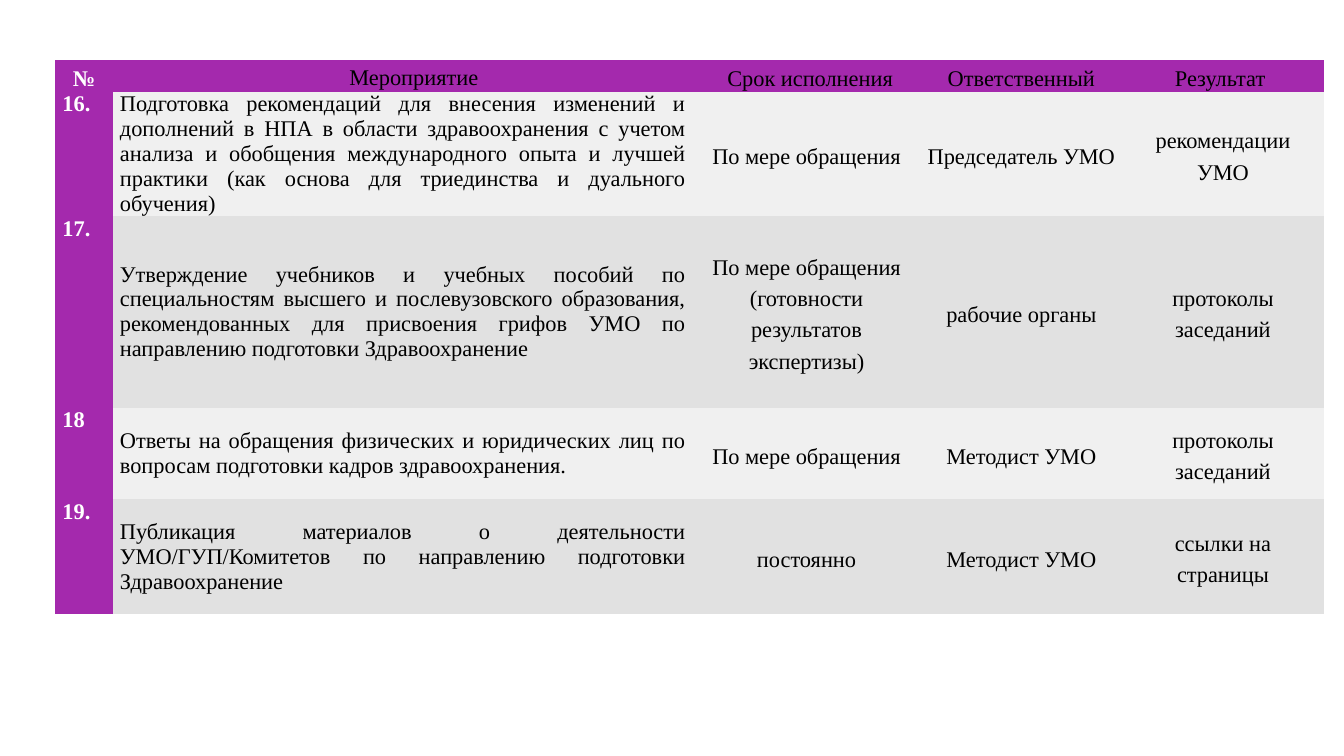
from pptx import Presentation
from pptx.dml.color import RGBColor
from pptx.enum.text import MSO_ANCHOR, PP_ALIGN
from pptx.util import Inches, Pt

PURPLE, WHITE, BLACK = "A429AD", "FFFFFF", "000000"
BANDS = ["F0F0F0", "E1E1E1"]
NO_GRID_STYLE = "{2D5ABB26-0587-4C30-8999-92F81FD0307C}"
COLUMN_WIDTHS = [0.57, 5.75, 2.26, 2, 2]
ROW_HEIGHTS = [0.24, 0.95, 1.9, 0.91, 1.14]
HEADER_INDENTS = {1: 0.22, 2: 0.07}
PLAN = [
    ["№", "Мероприятие", "Срок исполнения", "Ответственный", "Результат "],
    ["16.",
     "Подготовка рекомендаций для внесения изменений и дополнений в НПА "
     "в области здравоохранения с учетом анализа и обобщения международного "
     "опыта и лучшей практики (как основа для триединства и дуального обучения)",
     "По мере обращения", "Председатель УМО", "рекомендации УМО"],
    ["17.",
     "Утверждение учебников и учебных пособий по специальностям высшего "
     "и послевузовского образования, рекомендованных для присвоения грифов "
     "УМО по направлению подготовки Здравоохранение",
     "По мере обращения (готовности результатов экспертизы)",
     "рабочие органы", "протоколы заседаний"],
    ["18",
     "Ответы на обращения физических и юридических лиц по вопросам "
     "подготовки кадров здравоохранения.",
     "По мере обращения", "Методист УМО", "протоколы заседаний"],
    ["19.",
     "Публикация материалов о деятельности УМО/ГУП/Комитетов "
     "по направлению подготовки Здравоохранение",
     "постоянно", "Методист УМО", "ссылки на страницы"],
]


def color(value):
    return RGBColor.from_string(value)


presentation = Presentation()
presentation.slide_width = Inches(13.33)
presentation.slide_height = Inches(7.5)
slide = presentation.slides.add_slide(presentation.slide_layouts[6])

table_shape = slide.shapes.add_table(
    len(PLAN), len(COLUMN_WIDTHS), Inches(0.55), Inches(0.6),
    Inches(sum(COLUMN_WIDTHS)), Inches(sum(ROW_HEIGHTS)))
table = table_shape.table
table.horz_banding = False
table.first_col = True
table._tbl.tblPr[0].text = NO_GRID_STYLE
for column, width in zip(table.columns, COLUMN_WIDTHS):
    column.width = Inches(width)
for row, height in zip(table.rows, ROW_HEIGHTS):
    row.height = Inches(height)

for row_index, texts in enumerate(PLAN):
    for column_index, text in enumerate(texts):
        is_header = row_index == 0
        is_number = column_index == 0
        is_result_header = is_header and column_index == len(texts) - 1
        cell = table.cell(row_index, column_index)
        cell.margin_left = cell.margin_right = Inches(0.07)
        cell.margin_top = cell.margin_bottom = 0
        cell.fill.solid()
        cell.fill.fore_color.rgb = color(
            PURPLE if is_header or is_number else BANDS[(row_index - 1) % 2])
        at_top = is_result_header or (is_number and not is_header)
        cell.vertical_anchor = MSO_ANCHOR.TOP if at_top else MSO_ANCHOR.MIDDLE

        paragraph = cell.text_frame.paragraphs[0]
        if is_header or column_index > 1:
            paragraph.alignment = PP_ALIGN.CENTER
            paragraph.line_spacing = 1.25
        else:
            paragraph.alignment = PP_ALIGN.LEFT if is_number else PP_ALIGN.JUSTIFY
        if is_header and column_index in HEADER_INDENTS:
            indent = Inches(HEADER_INDENTS[column_index])
            paragraph._p.get_or_add_pPr().set("indent", str(indent))
        if is_header and column_index == 1:
            paragraph.line_spacing = 1.15

        run = paragraph.add_run()
        run.text = text
        run.font.name = "Times New Roman"
        run.font.size = Pt(16)
        run.font.bold = is_number
        run.font.color.rgb = color(WHITE if is_number else BLACK)

presentation.save("out.pptx")
